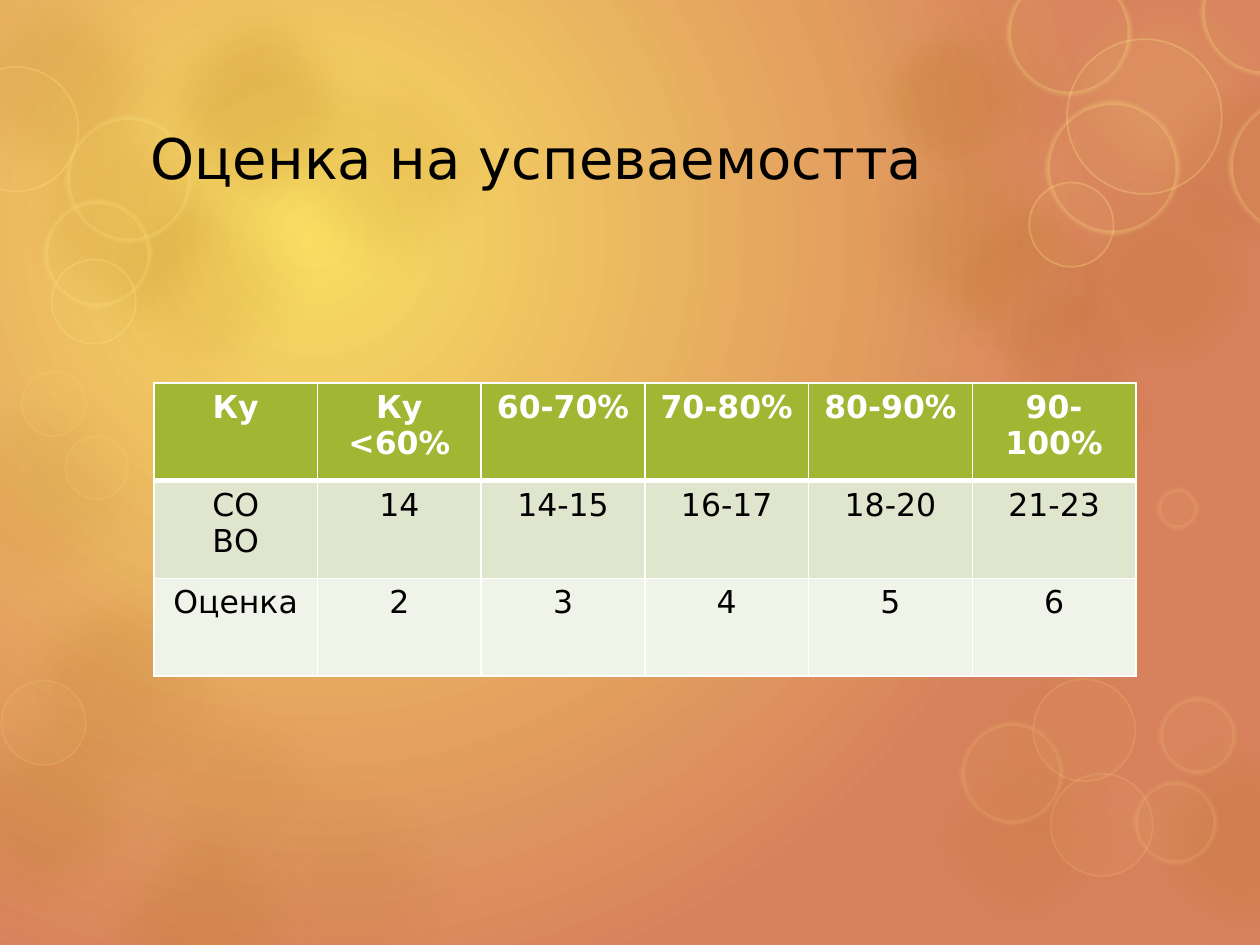
from dataclasses import dataclass

from lxml import etree
from pptx import Presentation
from pptx.dml.color import RGBColor
from pptx.enum.shapes import MSO_SHAPE
from pptx.enum.text import MSO_ANCHOR, PP_ALIGN
from pptx.oxml.ns import qn
from pptx.util import Cm, Pt

CIRCLE = MSO_SHAPE.OVAL
MIDDLE = MSO_ANCHOR.MIDDLE
LEFT, CENTER = PP_ALIGN.LEFT, PP_ALIGN.CENTER


@dataclass(frozen=True)
class Theme:
    font: str = "DejaVu Sans"
    title_size: int = 32
    table_size: int = 18
    ink: str = "000000"
    white: str = "FFFFFF"
    glow: str = "F8DD62"
    coral: str = "D8825D"
    brown: str = "AE6D11"
    amber: str = "F1BD74"
    cream: str = "FFE281"
    header: str = "A1B633"
    bands: tuple = ("E0E5CE", "F0F3E8")


THEME = Theme()

# Circles, in cm: left, top, diameter, opacity in %
BLOT = 5.31
BLOTS = [
    (-0.65, 11.23, BLOT, 8), (1.45, 3.05, BLOT, 10), (5.21, 0.79, BLOT, 10),
    (1.45, 15.93, BLOT, 16), (-1.41, -0.83, BLOT, 14), (2.57, -0.46, BLOT, 20),
    (0, 1.83, BLOT, 15), (16.99, -0.75, BLOT, 10), (20.83, 3.05, BLOT, 15),
    (22.38, 14.27, BLOT, 16), (18.52, 12.12, BLOT, 5), (-1.74, 13.74, BLOT, 16),
    (1.96, 13.31, BLOT, 8), (16.99, 2.18, BLOT, 15), (17.93, 14.27, BLOT, 10),
    (4.39, 15.14, BLOT, 8), (-1.77, 7.16, BLOT, 8), (17.15, 6.65, 3.38, 10),
]
# Left, top, diameter, fill opacity, line opacity
HALOS = [
    (23.32, 1.65, 3.48, 10, 6), (17.63, 0.58, 2.9, 10, 6),
    (19.1, 4.04, 3.38, 10, 6), (20.04, 5.69, 2.9, 10, 6),
    (21.51, 7.39, 2.01, 10, 6), (0.76, 12.01, 3.89, 6, 4),
]
# Left, top, diameter, line opacity
SOFT_BUBBLES = [
    (1.32, 2.34, 2.54, 30), (0.89, 4.04, 2.16, 30), (20.29, -0.6, 2.51, 30),
    (24.21, -1.02, 2.54, 30), (24.77, 1.93, 2.84, 30), (21.08, 2.03, 2.69, 30),
    (19.38, 14.55, 2.06, 15), (22.86, 15.75, 1.68, 15), (23.37, 14.05, 1.55, 15),
    (23.32, 9.83, 0.84, 15),
]
CRISP_BUBBLES = [
    (0.03, 13.72, 1.7, 15), (-0.93, 1.35, 2.51, 30), (1.04, 5.23, 1.7, 30),
    (21.51, 0.79, 3.12, 30), (20.75, 3.68, 1.7, 30), (21.18, 15.6, 2.06, 15),
    (20.83, 13.69, 2.06, 15), (0.43, 7.49, 1.3, 15), (1.32, 8.79, 1.27, 15),
]

GRADES = [
    ["Ку", "Ку <60%", "60-70%", "70-80%", "80-90%", "90-100%"],
    ["СО\nВО", "14", "14-15", "16-17", "18-20", "21-23"],
    ["Оценка", "2", "3", "4", "5", "6"],
]


def rgb(code):
    return RGBColor.from_string(code)


def write_text(frame, text, size, color=THEME.ink, bold=False, align=LEFT):
    """Write each line of text as one formatted paragraph."""
    frame.word_wrap = True
    for number, line in enumerate(text.split("\n")):
        paragraph = frame.add_paragraph() if number else frame.paragraphs[0]
        paragraph.alignment = align
        run = paragraph.add_run()
        run.text = line
        run.font.name = THEME.font
        run.font.size = Pt(size)
        run.font.bold = bold
        run.font.color.rgb = rgb(color)


def paint_background(slide):
    fill = slide.background.fill
    fill.gradient()
    for stop, color in zip(fill.gradient_stops, (THEME.glow, THEME.coral)):
        stop.color.rgb = rgb(color)
    gradient = slide.element.find(".//" + qn("a:gradFill"))
    gradient.remove(gradient.find(qn("a:lin")))
    radial = etree.SubElement(gradient, qn("a:path"), path="circle")
    etree.SubElement(radial, qn("a:fillToRect"),
                     l="50000", t="50000", r="100000", b="100000")


def add_circle(slide, left, top, size, color, opacity,
               line=None, line_width=0, line_opacity=0, soft=0):
    circle = slide.shapes.add_shape(CIRCLE, Cm(left), Cm(top), Cm(size), Cm(size))
    circle.shadow.inherit = False
    circle.fill.solid()
    circle.fill.fore_color.rgb = rgb(color)
    if line:
        circle.line.color.rgb = rgb(line)
        circle.line.width = Pt(line_width)
    else:
        circle.line.fill.background()
    properties = circle.element.spPr
    for paint, percent in zip(properties.iter(qn("a:srgbClr")), (opacity, line_opacity)):
        etree.SubElement(paint, qn("a:alpha"), val=str(percent * 1000))
    if soft:
        effects = properties.find(qn("a:effectLst"))
        etree.SubElement(effects, qn("a:softEdge"), rad=str(Pt(soft)))


def add_bokeh(slide):
    for *place, opacity in BLOTS:
        add_circle(slide, *place, THEME.brown, opacity, soft=25)
    add_circle(slide, 20.83, -0.83, BLOT, THEME.cream, 10, soft=25)
    for *place, opacity, line_opacity in HALOS:
        add_circle(slide, *place, THEME.brown, opacity,
                   THEME.amber, 14, line_opacity, soft=12)
    for bubbles, width, soft in ((SOFT_BUBBLES, 5, 2.5), (CRISP_BUBBLES, 1, 0)):
        for *place, line_opacity in bubbles:
            add_circle(slide, *place, THEME.cream, 5,
                       THEME.cream, width, line_opacity, soft)


def add_title(slide, text):
    title = slide.shapes.add_textbox(Cm(2.79), Cm(1.88), Cm(19.79), Cm(2.57))
    title.text_frame.vertical_anchor = MIDDLE
    write_text(title.text_frame, text, size=THEME.title_size)


def set_borders(cell, **widths):
    properties = cell._tc.get_or_add_tcPr()
    for side in "LRTB":
        edge = etree.SubElement(properties, qn(f"a:ln{side}"),
                                w=str(Pt(widths.get(side, 1))))
        paint = etree.SubElement(edge, qn("a:solidFill"))
        etree.SubElement(paint, qn("a:srgbClr"), val=THEME.white)


def add_grade_table(slide, rows):
    column_width, row_height = Cm(3.3), Cm(1.97)
    columns = len(rows[0])
    table = slide.shapes.add_table(len(rows), columns, Cm(3.1), Cm(7.72),
                                   column_width * columns,
                                   row_height * len(rows)).table
    fills = (THEME.header, *THEME.bands)
    for r, row in enumerate(rows):
        heading = r == 0
        for c, text in enumerate(row):
            cell = table.cell(r, c)
            set_borders(cell, T=3 if r == 1 else 1, B=3 if heading else 1)
            cell.fill.solid()
            cell.fill.fore_color.rgb = rgb(fills[r])
            write_text(cell.text_frame, text, size=THEME.table_size, bold=heading,
                       color=THEME.white if heading else THEME.ink, align=CENTER)


def main():
    deck = Presentation()
    deck.slide_width, deck.slide_height = Cm(25.4), Cm(19.05)
    slide = deck.slides.add_slide(deck.slide_layouts[6])
    paint_background(slide)
    add_bokeh(slide)
    add_title(slide, "Оценка на успеваемостта")
    add_grade_table(slide, GRADES)
    deck.save("out.pptx")


if __name__ == "__main__":
    main()
